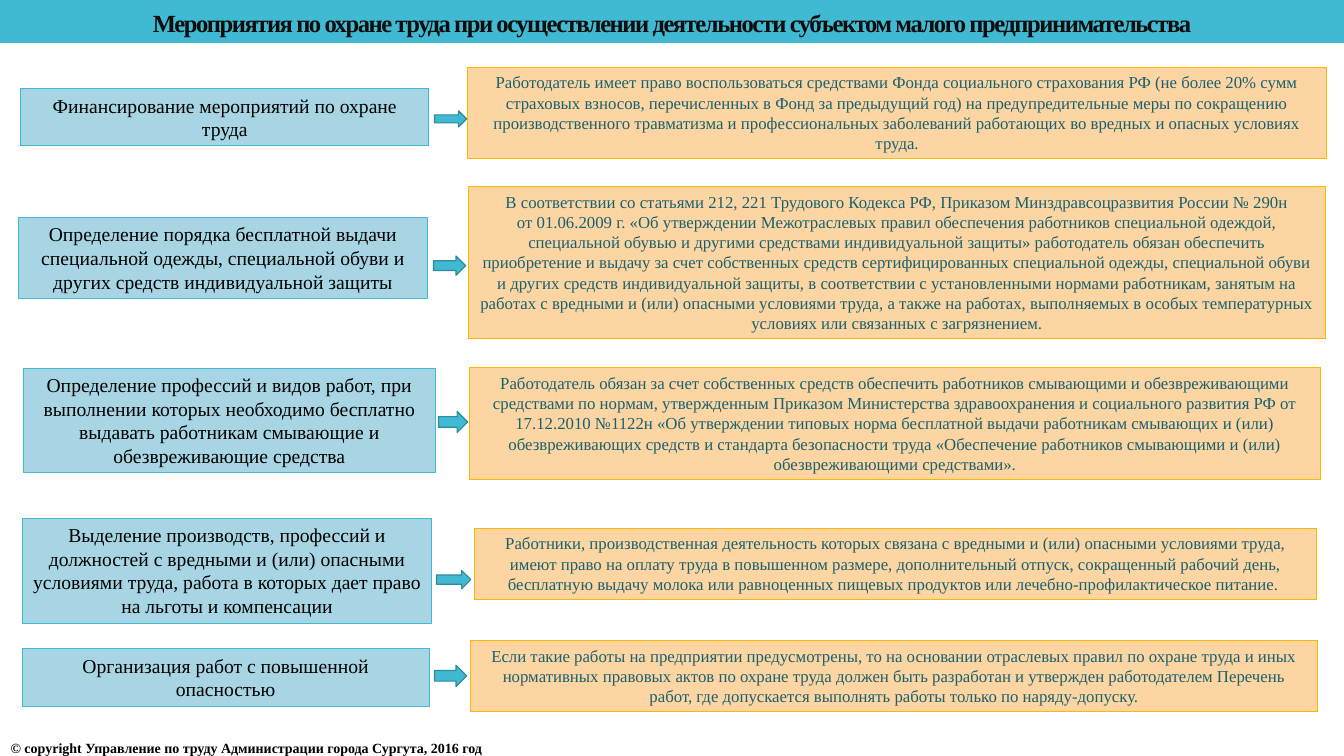
from dataclasses import dataclass

from pptx import Presentation
from pptx.dml.color import RGBColor
from pptx.enum.shapes import MSO_SHAPE
from pptx.enum.text import MSO_ANCHOR, MSO_AUTO_SIZE, PP_ALIGN
from pptx.util import Pt

RECT, ARROW = MSO_SHAPE.RECTANGLE, MSO_SHAPE.RIGHT_ARROW
TOP, BOTTOM = MSO_ANCHOR.TOP, MSO_ANCHOR.BOTTOM
CENTER, LEFT = PP_ALIGN.CENTER, PP_ALIGN.LEFT
GROW = MSO_AUTO_SIZE.SHAPE_TO_FIT_TEXT
FONT = "Times New Roman"
TEAL, TEAL_DARK, TEAL_LIGHT, TEAL_TEXT = "40BAD2", "2F8A9B", "A7D5E3", "1A616F"
ORANGE, ORANGE_LIGHT = "FAB900", "FCD5A2"
BLACK, TITLE_BLACK = "000000", "0D0D0D"
NBSP = chr(160)

Box = tuple[float, float, float, float]


@dataclass
class Measure:
    """One row: a measure, an arrow, and the rule behind the measure."""
    name: str
    name_box: Box
    arrow_box: Box
    rule: str
    rule_box: Box


MEASURES = [
    Measure(
        "Финансирование мероприятий по охране труда",
        (14.8, 63.2, 291.6, 41), (310.3, 79.2, 23, 11.5),
        "Работодатель имеет право воспользоваться средствами Фонда социального "
        "страхования РФ (не более 20% сумм страховых взносов, перечисленных в Фонд за "
        "предыдущий год) на предупредительные меры по сокращению производственного "
        "травматизма и профессиональных заболеваний работающих во вредных и опасных "
        "условиях труда.",
        (334.1, 48, 613.4, 65.3)),
    Measure(
        "Определение порядка бесплатной выдачи специальной одежды, специальной обуви и "
        "других средств индивидуальной защиты",
        (13.5, 155.3, 291.6, 58.1), (309.6, 182.9, 23, 13.7),
        "В соответствии со статьями 212, 221 Трудового Кодекса РФ, Приказом "
        f"Минздравсоцразвития России № 290н от{NBSP}01.06.2009 г. «Об утверждении "
        "Межотраслевых правил обеспечения работников специальной одеждой, специальной "
        "обувью и другими средствами индивидуальной защиты» работодатель обязан "
        "обеспечить приобретение и выдачу за счет собственных средств "
        "сертифицированных специальной одежды, специальной обуви и других средств "
        "индивидуальной защиты, в соответствии с установленными нормами работникам, "
        "занятым на работах с вредными и (или) опасными условиями труда, а также на "
        "работах, выполняемых в особых температурных условиях или связанных с "
        "загрязнением.",
        (334.8, 133.4, 612, 108.7)),
    Measure(
        "Определение профессий и видов работ, при выполнении которых необходимо "
        "бесплатно выдавать работникам смывающие и обезвреживающие средства",
        (16.6, 263, 294.5, 74.9), (313.2, 293.8, 20.9, 15.1),
        "Работодатель обязан за счет собственных средств обеспечить работников "
        "смывающими и обезвреживающими средствами по нормам, утвержденным Приказом "
        "Министерства здравоохранения и социального развития РФ от 17.12.2010 №1122н "
        "«Об утверждении типовых норма бесплатной выдачи работникам смывающих и (или) "
        "обезвреживающих средств и стандарта безопасности труда «Обеспечение "
        "работников смывающими и (или) обезвреживающими средствами».",
        (335.5, 262.8, 607.7, 79.9)),
    Measure(
        "Выделение производств, профессий и должностей с вредными и (или) опасными "
        "условиями труда, работа в которых дает право на льготы и компенсации",
        (16, 370.2, 292.6, 75), (311.8, 407.5, 24.5, 13),
        "Работники, производственная деятельность которых связана с вредными и (или) "
        "опасными условиями труда, имеют право на оплату труда в повышенном размере, "
        "дополнительный отпуск, сокращенный рабочий день, бесплатную выдачу молока или "
        f"равноценных пищевых продуктов или лечебно-профилактическое питание.{NBSP}",
        (339.1, 377.3, 601.5, 51.1)),
    Measure(
        "Организация работ с повышенной опасностью",
        (15.8, 463.2, 290.9, 41.2), (310.3, 475.2, 23, 15.1),
        "Если такие работы на предприятии предусмотрены, то на основании отраслевых "
        "правил по охране труда и иных нормативных правовых актов по охране труда "
        "должен быть разработан и утвержден работодателем Перечень работ, где "
        "допускается выполнять работы только по наряду-допуску.",
        (336.4, 457.4, 604.8, 51.1)),
]


def rgb(value: str) -> RGBColor:
    return RGBColor.from_string(value)


def add_block(s, kind, box: Box, fill: str, line: str, width: float = 0.75):
    sp = s.shapes.add_shape(kind, *map(Pt, box))
    sp.shadow.inherit = False
    sp.fill.solid()
    sp.fill.fore_color.rgb = rgb(fill)
    sp.line.color.rgb = rgb(line)
    sp.line.width = Pt(width)
    return sp


def write(sp, text: str, size: float, color: str, align=CENTER, bold: bool = False, **frame):
    """Put one paragraph in a shape; frame holds text frame settings."""
    tf = sp.text_frame
    for name, value in {"word_wrap": True, **frame}.items():
        setattr(tf, name, value)
    p = tf.paragraphs[0]
    p.alignment = align
    r = p.add_run()
    r.text = text
    for name, value in {"name": FONT, "size": Pt(size), "bold": bold}.items():
        setattr(r.font, name, value)
    r.font.color.rgb = rgb(color)
    return p, r


def add_title(s, text: str) -> None:
    sp = add_block(s, RECT, (0, 0, 960, 30.5), TEAL, TEAL)
    p, r = write(sp, text, 17.6, TITLE_BLACK, bold=True, vertical_anchor=BOTTOM)
    p.line_spacing = 0.9
    r.font._element.set("spc", "-107")


def add_measure(s, m: Measure) -> None:
    frame = {"vertical_anchor": TOP, "auto_size": GROW}
    name = add_block(s, RECT, m.name_box, TEAL_LIGHT, TEAL)
    write(name, m.name, 14, BLACK, **frame)
    rule = add_block(s, RECT, m.rule_box, ORANGE_LIGHT, ORANGE)
    write(rule, m.rule, 12, TEAL_TEXT, **frame)
    add_block(s, ARROW, m.arrow_box, TEAL, TEAL_DARK, 0.85)


def add_footer(s, text: str) -> None:
    sp = s.shapes.add_textbox(*map(Pt, (7.6, 527.8, 544.3, 12.2)))
    margins = {f"margin_{side}": 0 for side in ("left", "top", "right", "bottom")}
    write(sp, text, 10, BLACK, LEFT, True, vertical_anchor=BOTTOM, **margins)


def main() -> None:
    prs = Presentation()
    prs.slide_width, prs.slide_height = Pt(960), Pt(540)
    s = prs.slides.add_slide(prs.slide_layouts[6])
    add_title(s, "Мероприятия по охране труда при осуществлении деятельности "
                 "субъектом малого предпринимательства")
    for m in MEASURES:
        add_measure(s, m)
    add_footer(s, "© copyright Управление по труду Администрации города Сургута, 2016 год")
    prs.save("out.pptx")


if __name__ == "__main__":
    main()
